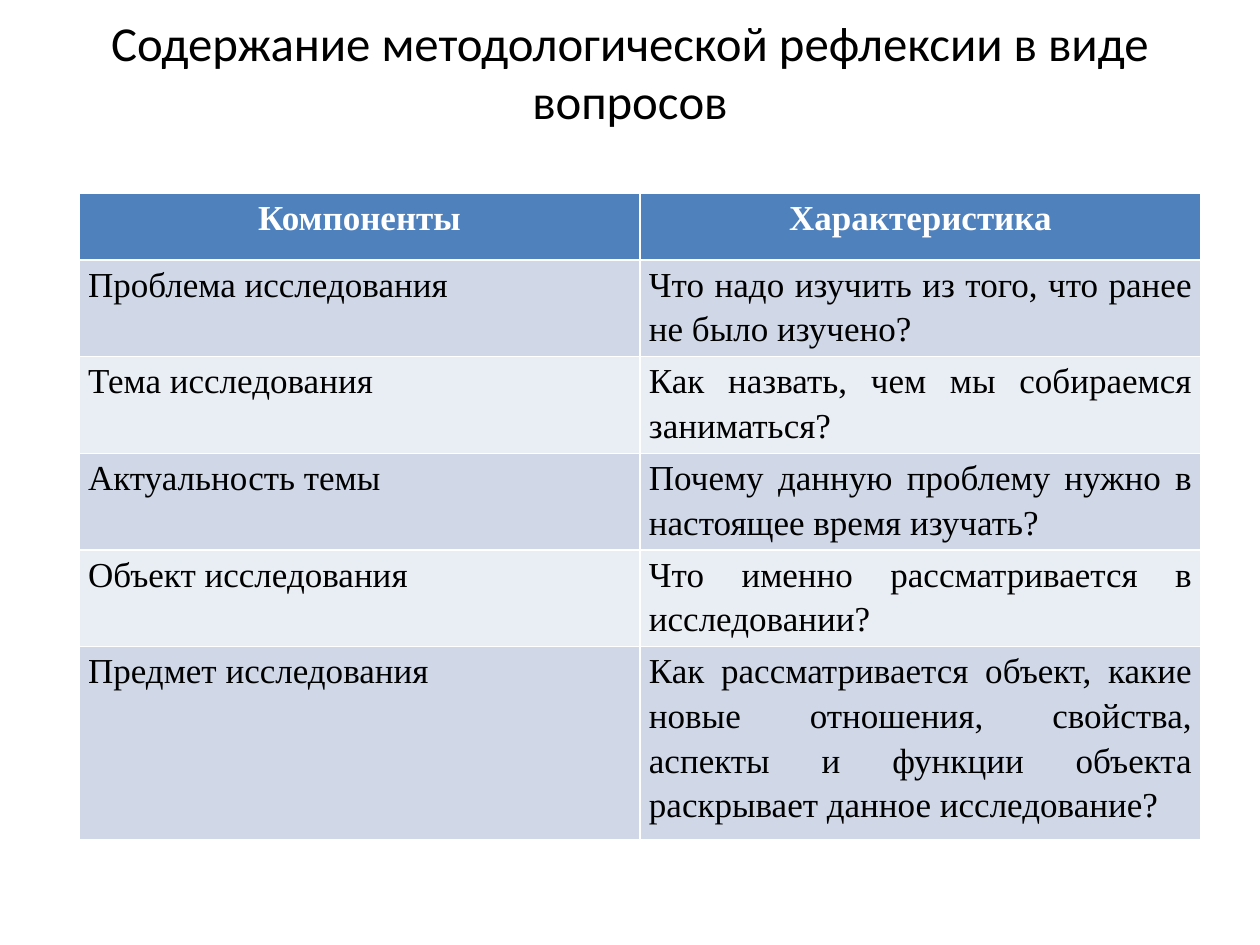
import pptx
import pptx.util
import pptx.dml.color
import pptx.enum.text

RGBColor = pptx.dml.color.RGBColor
Align = pptx.enum.text.PP_ALIGN
Anchor = pptx.enum.text.MSO_ANCHOR

PX = 914400 // 126
BLACK = RGBColor(0x00, 0x00, 0x00)
WHITE = RGBColor(0xFF, 0xFF, 0xFF)
BLUE = RGBColor(0x4F, 0x81, 0xBD)
BANDS = RGBColor(0xE9, 0xED, 0xF4), RGBColor(0xD0, 0xD8, 0xE8)

TITLE = "Содержание методологической рефлексии в виде вопросов"
HEAD = ("Компоненты", "Характеристика")
ROWS = [
    ("Проблема исследования",
     "Что надо изучить из того, что ранее не было изучено?"),
    ("Тема исследования",
     "Как назвать, чем мы собираемся заниматься?"),
    ("Актуальность темы",
     "Почему данную проблему нужно в настоящее время изучать?"),
    ("Объект исследования",
     "Что именно рассматривается в исследовании?"),
    ("Предмет исследования",
     "Как рассматривается объект, какие новые отношения, свойства, "
     "аспекты и функции объекта раскрывает данное исследование?"),
]
HEIGHTS = (67, 92, 91, 92, 91, 181)


def write(frame, text, font="Times New Roman", size=20, color=BLACK,
          bold=False, align=Align.JUSTIFY, line=1.15, after=6):
    para = frame.paragraphs[0]
    para.alignment = align
    para.line_spacing = line
    para.space_after = pptx.util.Pt(after)
    run = para.add_run()
    run.text = text
    run.font.name = font
    run.font.size = pptx.util.Pt(size)
    run.font.bold = bold
    run.font.color.rgb = color


def title(slide, left, top, width, height):
    box = slide.shapes.add_textbox(left * PX, top * PX, width * PX, height * PX)
    frame = box.text_frame
    frame.word_wrap = True
    frame.vertical_anchor = Anchor.MIDDLE
    frame.margin_top = frame.margin_bottom = 0
    write(frame, TITLE, font="Calibri", size=27.9, align=Align.CENTER,
          line=1.0, after=0)


def grid(slide, left, top, width):
    data = [HEAD] + ROWS
    table = slide.shapes.add_table(
        len(data), len(HEAD), left * PX, top * PX,
        width * PX, sum(HEIGHTS) * PX).table
    for col in table.columns:
        col.width = width * PX // len(HEAD)
    for r, texts in enumerate(data):
        table.rows[r].height = HEIGHTS[r] * PX
        for c, text in enumerate(texts):
            cell = table.cell(r, c)
            cell.margin_left = cell.margin_right = 9 * PX
            cell.margin_top = cell.margin_bottom = 0
            cell.fill.solid()
            if r == 0:
                cell.fill.fore_color.rgb = BLUE
                write(cell.text_frame, text, color=WHITE, bold=True,
                      align=Align.CENTER)
            else:
                cell.fill.fore_color.rgb = BANDS[r % 2]
                write(cell.text_frame, text)


def main():
    deck = pptx.Presentation()
    deck.slide_width = 1260 * PX
    deck.slide_height = 945 * PX
    slide = deck.slides.add_slide(deck.slide_layouts[6])
    title(slide, 63, 12, 1134, 118)
    grid(slide, 79, 193, 1122)
    deck.save("out.pptx")


if __name__ == "__main__":
    main()
